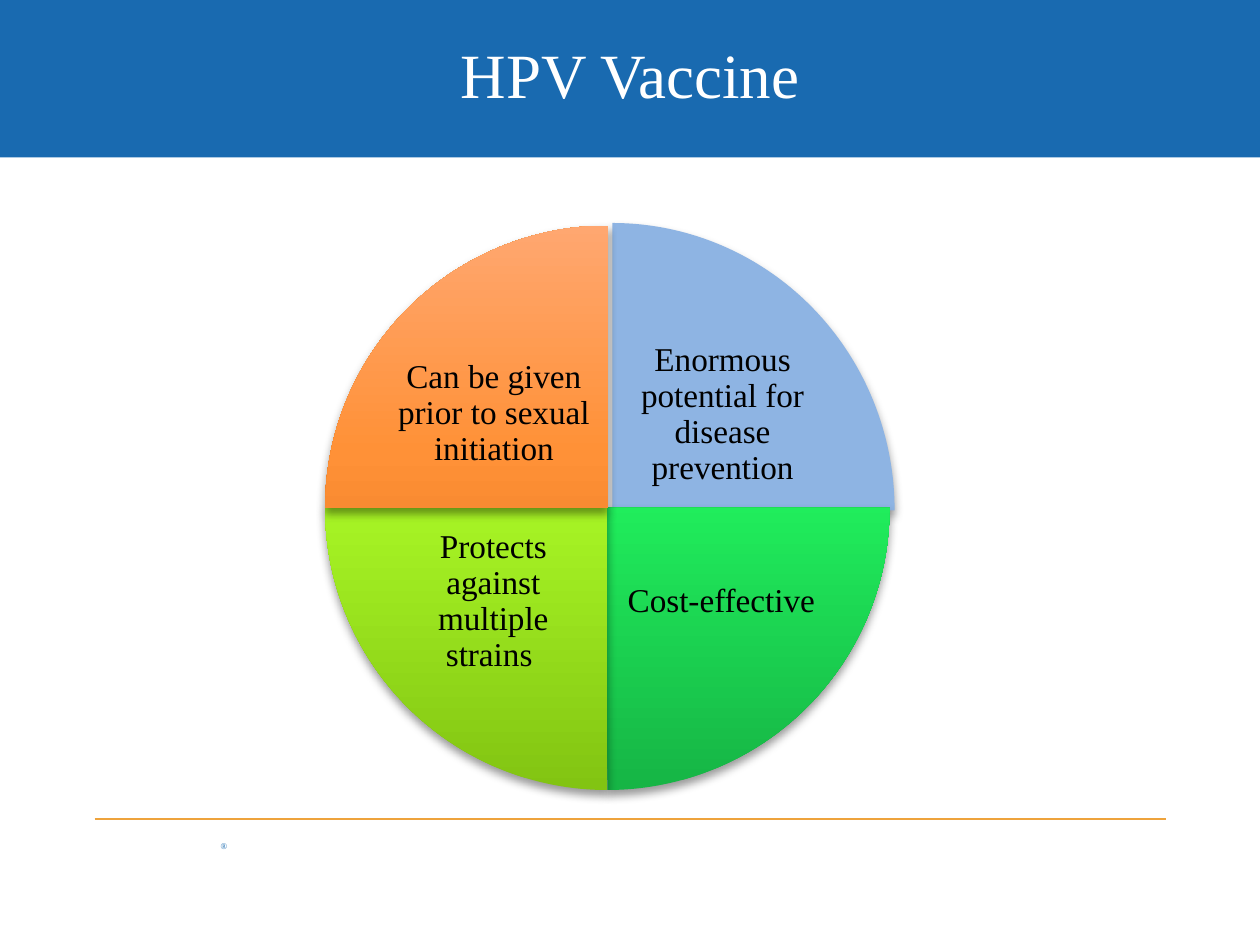
from copy import deepcopy

from pptx import Presentation
from pptx.dml.color import RGBColor
from pptx.enum.shapes import MSO_CONNECTOR, MSO_SHAPE
from pptx.enum.text import MSO_ANCHOR, MSO_AUTO_SIZE, PP_ALIGN
from pptx.oxml.ns import qn
from pptx.oxml.xmlchemy import OxmlElement
from pptx.util import Inches, Pt

RECTANGLE, PIE = MSO_SHAPE.RECTANGLE, MSO_SHAPE.PIE
STRAIGHT = MSO_CONNECTOR.STRAIGHT
MIDDLE, TOP = MSO_ANCHOR.MIDDLE, MSO_ANCHOR.TOP
CENTER, LEFT = PP_ALIGN.CENTER, PP_ALIGN.LEFT
NO_AUTOFIT = MSO_AUTO_SIZE.NONE

FONT = "Times New Roman"
BAND_BLUE = RGBColor(0x19, 0x6A, 0xB0)
RULE_ORANGE = RGBColor(0xEE, 0xA3, 0x3C)
WHITE = RGBColor(0xFF, 0xFF, 0xFF)
BLACK = RGBColor(0, 0, 0)
WEDGE_BLUE = [RGBColor(0x8E, 0xB4, 0xE3)]
WEDGE_GREEN = [RGBColor(0x16, 0xB5, 0x45), RGBColor(0x22, 0xF7, 0x60), RGBColor(0x57, 0xFF, 0x7D)]
WEDGE_LIME = [RGBColor(0x82, 0xC4, 0x12), RGBColor(0xAF, 0xFF, 0x29), RGBColor(0xBC, 0xFF, 0x64)]
WEDGE_ORANGE = [RGBColor(0xD1, 0x67, 0x0F), RGBColor(0xFF, 0x91, 0x37), RGBColor(0xFF, 0xA7, 0x70)]
GRADIENT_POSITIONS = (0, 0.6, 1)
QUARTER = 54

# Each wedge: pie offset and size, quarter index, colours, label offset and size, label.
WEDGES = [
    ((0.04, -0.02, 4.48, 4.56), 3, WEDGE_BLUE, (2.33, 0.82, 1.65, 1.36),
     "Enormous potential for disease prevention"),
    ((0, 0, 4.48, 4.48), 0, WEDGE_GREEN, (2.32, 2.32, 1.65, 1.33), "Cost-effective"),
    ((0, 0, 4.48, 4.48), 1, WEDGE_LIME, (0.51, 2.32, 1.65, 1.33),
     "Protects against multiple strains "),
    ((0, 0, 4.49, 4.48), 2, WEDGE_ORANGE, (0.51, 0.83, 1.66, 1.33),
     "Can be given prior to sexual initiation"),
]


def set_all(target, values):
    """Set every named attribute of the target."""
    for name, value in values.items():
        setattr(target, name, value)


def inches(*lengths):
    """Convert several lengths in inches."""
    return [Inches(length) for length in lengths]


def write_text(frame, text, size, color, align, anchor, inset=0.0, spacing=1.0):
    """Fill a text frame with one formatted paragraph."""
    margins = dict.fromkeys(
        ("margin_left", "margin_top", "margin_right", "margin_bottom"), Inches(inset))
    set_all(frame, {"word_wrap": True, "auto_size": NO_AUTOFIT,
                    "vertical_anchor": anchor, **margins})
    paragraph = frame.paragraphs[0]
    set_all(paragraph, {"alignment": align, "line_spacing": spacing})
    run = paragraph.add_run()
    run.text = text
    set_all(run.font, {"name": FONT, "size": Pt(size)})
    run.font.color.rgb = color


def add_header(slide, left, top, width, height):
    """Draw the blue band and put the slide title on it."""
    band = slide.shapes.add_shape(RECTANGLE, *inches(left, top, width, height))
    band.shadow.inherit = False
    band.fill.solid()
    band.fill.fore_color.rgb = BAND_BLUE
    band.line.fill.background()
    title = slide.shapes.title
    band._element.addnext(title._element)
    bounds = inches(left + 0.5, top + 0.08, width - 1, 1)
    set_all(title, dict(zip(("left", "top", "width", "height"), bounds)))
    write_text(title.text_frame, "HPV Vaccine", 36, WHITE, CENTER, MIDDLE, 0.05)


def add_footer(slide, left, top, width):
    """Draw the orange rule and the small mark below it."""
    rule = slide.shapes.add_connector(STRAIGHT, *inches(left, top, left + width, top))
    rule.line.color.rgb = RULE_ORANGE
    rule.line.width = Pt(0.75)
    rule._element.spPr.append(OxmlElement("a:effectLst"))
    mark = slide.shapes.add_textbox(*inches(left + 1, top + 0.17, 0.25, 0.08))
    write_text(mark.text_frame, "®", 5, BAND_BLUE, LEFT, TOP)


def fill_wedge(wedge, colors):
    """Fill a wedge with one colour or an upward gradient."""
    if len(colors) == 1:
        wedge.fill.solid()
        wedge.fill.fore_color.rgb = colors[0]
        return
    wedge.fill.gradient()
    wedge.fill.gradient_angle = 90
    stop_list = wedge._element.spPr.find(".//" + qn("a:gsLst"))
    stop_list.append(deepcopy(stop_list[0]))
    for stop, color, position in zip(wedge.fill.gradient_stops, colors, GRADIENT_POSITIONS):
        stop.color.rgb = color
        stop.position = position


def add_shadow(wedge):
    """Give a wedge a soft black shadow straight below it."""
    wedge.shadow.inherit = False
    shadow = OxmlElement("a:outerShdw")
    for name, value in {"blurRad": Pt(5.2), "dist": Pt(3), "dir": 5400000,
                        "rotWithShape": 0}.items():
        shadow.set(name, str(int(value)))
    color = OxmlElement("a:srgbClr")
    color.set("val", str(BLACK))
    alpha = OxmlElement("a:alpha")
    alpha.set("val", "40000")
    color.append(alpha)
    shadow.append(color)
    wedge._element.spPr.find(qn("a:effectLst")).append(shadow)


def add_benefit_wheel(slide, left, top):
    """Draw the four labelled quarters of the wheel."""
    for pie_box, quarter, colors, label_box, label in WEDGES:
        x, y, width, height = pie_box
        wedge = slide.shapes.add_shape(PIE, *inches(left + x, top + y, width, height))
        wedge.adjustments[0] = quarter * QUARTER
        wedge.adjustments[1] = (quarter + 1) % 4 * QUARTER
        fill_wedge(wedge, colors)
        wedge.line.fill.background()
        add_shadow(wedge)
        x, y, width, height = label_box
        caption = slide.shapes.add_textbox(*inches(left + x, top + y, width, height))
        write_text(caption.text_frame, label, 19, BLACK, CENTER, MIDDLE, 0.03, 0.9)


def main():
    """Build the slide and save it."""
    presentation = Presentation()
    set_all(presentation, {"slide_width": Inches(10), "slide_height": Inches(7.5)})
    slide = presentation.slides.add_slide(presentation.slide_layouts[5])
    add_header(slide, 0, 0, 10, 1.25)
    add_footer(slide, 0.75, 6.5, 8.5)
    add_benefit_wheel(slide, 2.58, 1.79)
    presentation.save("out.pptx")


if __name__ == "__main__":
    main()
